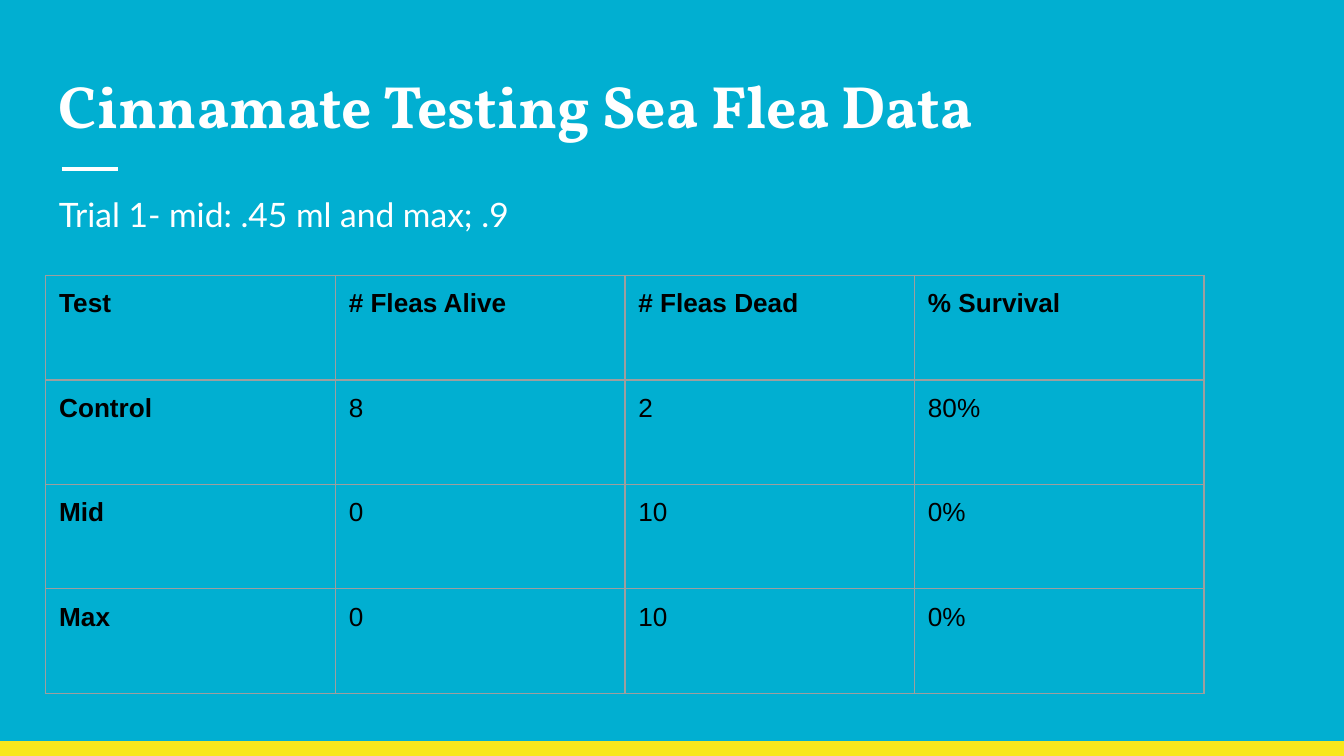
from dataclasses import dataclass

from lxml import etree
from pptx import Presentation
from pptx.dml.color import RGBColor
from pptx.enum.shapes import MSO_CONNECTOR, MSO_SHAPE
from pptx.enum.text import MSO_ANCHOR
from pptx.oxml.ns import qn
from pptx.slide import Slide
from pptx.table import _Cell
from pptx.text.text import _Paragraph
from pptx.util import Inches, Pt

RECTANGLE = MSO_SHAPE.RECTANGLE
STRAIGHT = MSO_CONNECTOR.STRAIGHT
TOP = MSO_ANCHOR.TOP

SLIDE_WIDTH = 10
SLIDE_HEIGHT = SLIDE_WIDTH * 9 / 16
BAR_HEIGHT = 0.11
MARGIN = 0.34
INSET = 0.1
TABLE_TOP, TABLE_WIDTH, TABLE_HEIGHT = 2.05, 8.62, 3.11
BLUE, YELLOW, WHITE, BLACK, GREY = "01AFD1", "F8E71C", "FFFFFF", "000000", "9E9E9E"

SURVIVAL_ROWS = [
    ("Test", "# Fleas Alive", "# Fleas Dead", "% Survival"),
    ("Control", "8", "2", "80%"),
    ("Mid", "0", "10", "0%"),
    ("Max", "0", "10", "0%"),
]


@dataclass
class TextStyle:
    font: str
    size: float
    color: str
    bold: bool = False


@dataclass
class TextBlock:
    text: str
    top: float
    height: float
    style: TextStyle
    line_spacing: float = 1.0
    space_after: float = 0


TEXT_BLOCKS = [
    TextBlock("Cinnamate Testing Sea Flea Data", 0.41, 0.71,
              TextStyle("Vollkorn", 32, WHITE, True)),
    TextBlock("Trial 1- mid: .45 ml and max; .9", 1.3, 3.7,
              TextStyle("Lato", 18, WHITE), 1.15, 16),
]


def rgb(value: str) -> RGBColor:
    """Turn a hex string into a colour."""
    return RGBColor.from_string(value)


def add_run(paragraph: _Paragraph, text: str, style: TextStyle) -> None:
    """Append one styled run to a paragraph."""
    run = paragraph.add_run()
    run.text = text
    run.font.name = style.font
    run.font.size = Pt(style.size)
    run.font.bold = style.bold
    run.font.color.rgb = rgb(style.color)


def draw_bottom_bar(slide: Slide) -> None:
    """Draw the yellow bar along the bottom edge."""
    bar = slide.shapes.add_shape(
        RECTANGLE, 0, Inches(SLIDE_HEIGHT - BAR_HEIGHT),
        Inches(SLIDE_WIDTH), Inches(BAR_HEIGHT))
    bar.shadow.inherit = False
    bar.fill.solid()
    bar.fill.fore_color.rgb = rgb(YELLOW)
    bar.line.fill.background()


def draw_title_rule(slide: Slide) -> None:
    """Draw the short white rule under the title."""
    rule = slide.shapes.add_connector(
        STRAIGHT, Inches(0.46), Inches(1.26), Inches(0.88), Inches(1.26))
    rule.line.color.rgb = rgb(WHITE)
    rule.line.width = Pt(2.25)
    etree.SubElement(rule._element.spPr, qn("a:effectLst"))


def draw_text_block(slide: Slide, block: TextBlock) -> None:
    """Draw a full-width block of text."""
    box = slide.shapes.add_textbox(
        Inches(MARGIN), Inches(block.top),
        Inches(SLIDE_WIDTH - 2 * MARGIN), Inches(block.height))
    frame = box.text_frame
    frame.word_wrap = True
    frame.vertical_anchor = TOP
    frame.margin_left = frame.margin_right = Inches(INSET)
    frame.margin_top = frame.margin_bottom = Inches(INSET)
    paragraph = frame.paragraphs[0]
    paragraph.line_spacing = block.line_spacing
    paragraph.space_after = Pt(block.space_after)
    add_run(paragraph, block.text, block.style)


def set_borders(cell: _Cell, color: str, width: float) -> None:
    """Give all four sides of a cell the same solid border."""
    properties = cell._tc.get_or_add_tcPr()
    for side in ("lnL", "lnR", "lnT", "lnB"):
        border = etree.SubElement(properties, qn(f"a:{side}"), w=str(Pt(width)))
        fill = etree.SubElement(border, qn("a:solidFill"))
        etree.SubElement(fill, qn("a:srgbClr"), val=color)


def draw_survival_table(slide: Slide) -> None:
    """Draw the flea survival table with a bold first row and column."""
    row_count, column_count = len(SURVIVAL_ROWS), len(SURVIVAL_ROWS[0])
    table = slide.shapes.add_table(
        row_count, column_count, Inches(MARGIN), Inches(TABLE_TOP),
        Inches(TABLE_WIDTH), Inches(TABLE_HEIGHT)).table
    table.first_row = table.horz_banding = False
    for row_index, values in enumerate(SURVIVAL_ROWS):
        for column_index, value in enumerate(values):
            cell = table.cell(row_index, column_index)
            set_borders(cell, GREY, 0.75)
            cell.fill.background()
            cell.margin_left = cell.margin_right = Inches(INSET)
            cell.margin_top = cell.margin_bottom = Inches(INSET)
            is_heading = row_index == 0 or column_index == 0
            add_run(cell.text_frame.paragraphs[0], value,
                    TextStyle("Arial", 14, BLACK, is_heading))


def main() -> None:
    """Build and save the slide."""
    presentation = Presentation()
    presentation.slide_width = Inches(SLIDE_WIDTH)
    presentation.slide_height = Inches(SLIDE_HEIGHT)
    slide = presentation.slides.add_slide(presentation.slide_layouts[6])
    slide.background.fill.solid()
    slide.background.fill.fore_color.rgb = rgb(BLUE)
    draw_bottom_bar(slide)
    draw_title_rule(slide)
    for block in TEXT_BLOCKS:
        draw_text_block(slide, block)
    draw_survival_table(slide)
    presentation.save("out.pptx")


if __name__ == "__main__":
    main()
